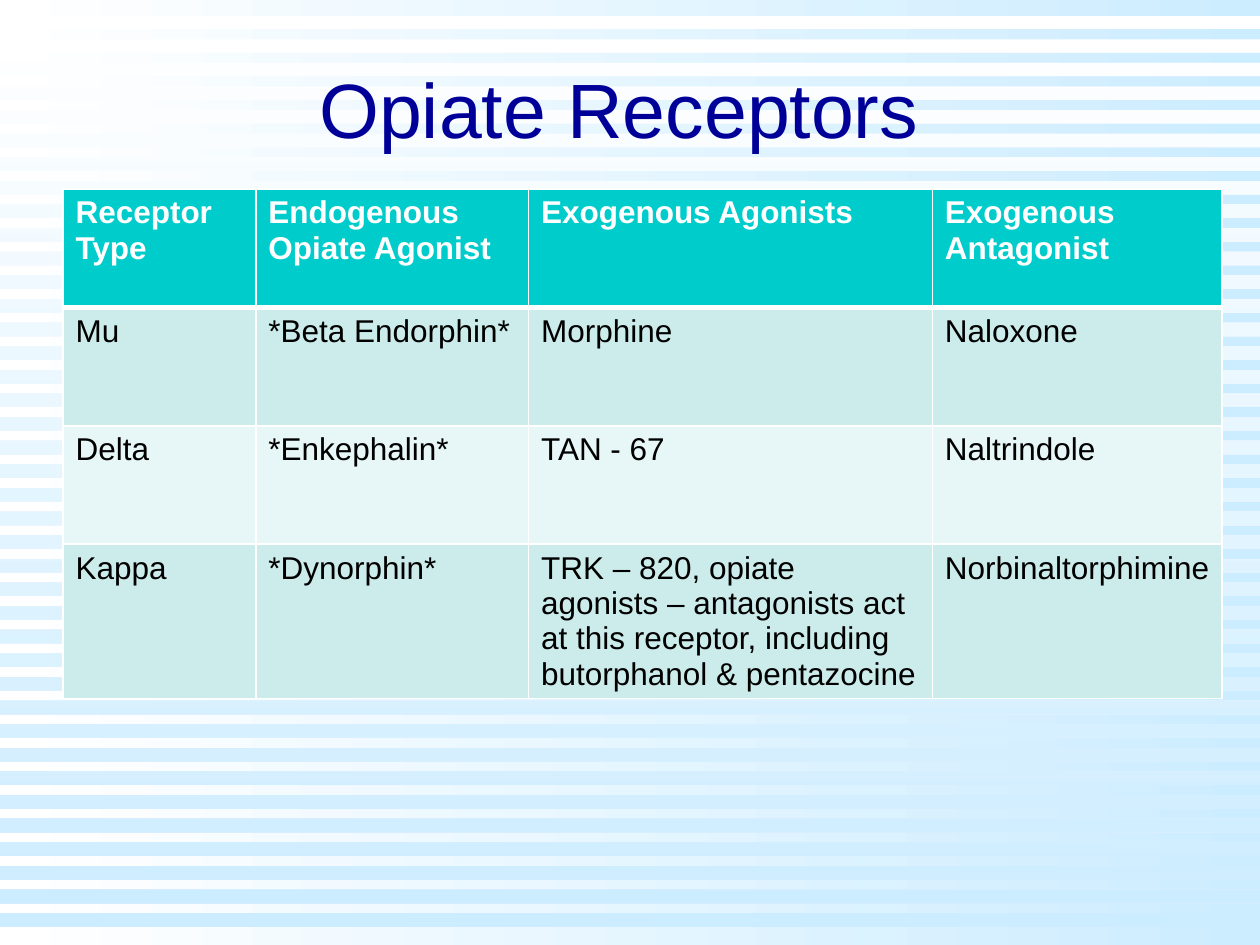
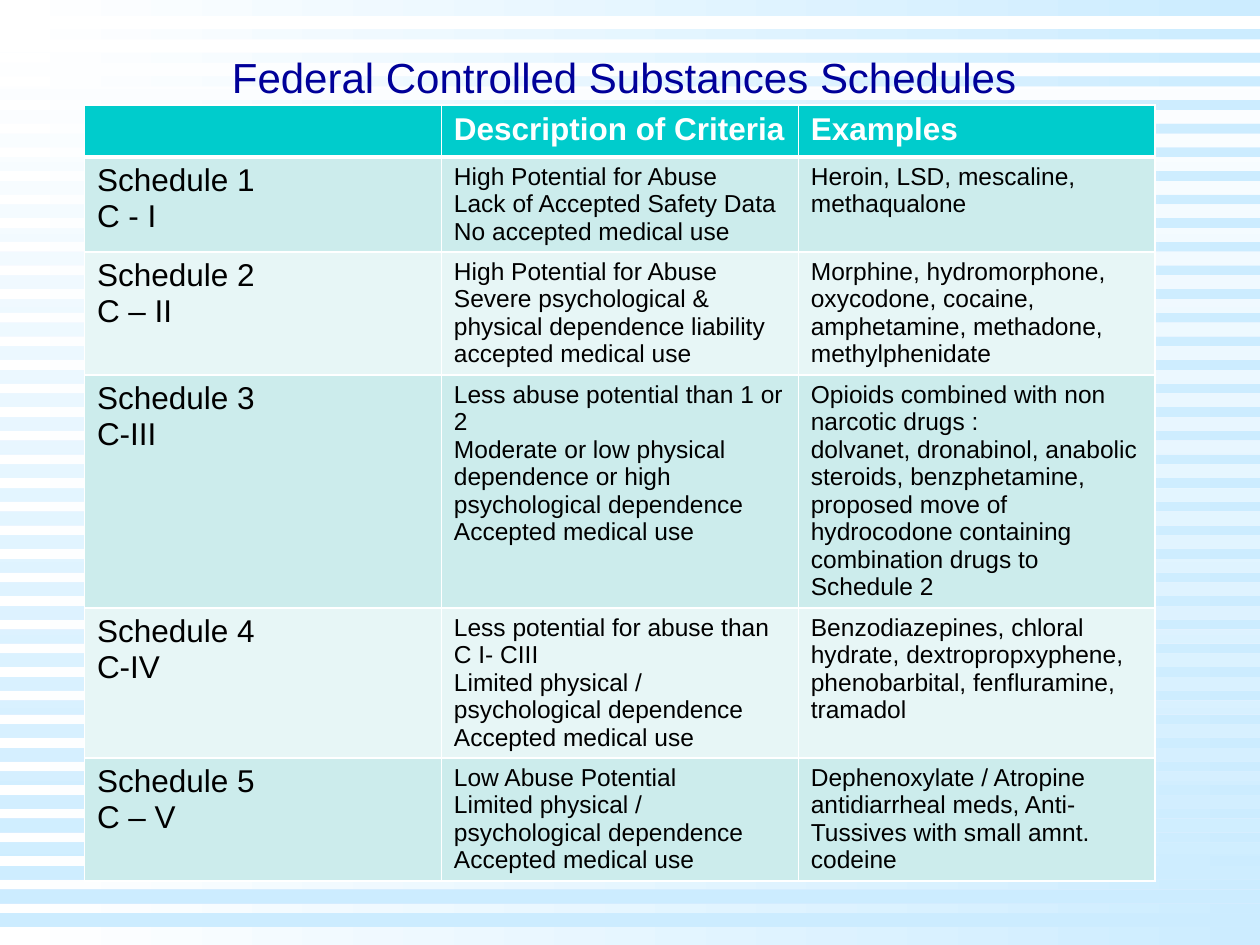
from dataclasses import dataclass

from lxml.etree import SubElement
from pptx import Presentation
from pptx.dml.color import RGBColor as RGB
from pptx.enum.shapes import MSO_SHAPE as SHAPE
from pptx.enum.text import MSO_ANCHOR as ANCHOR, PP_ALIGN as ALIGN
from pptx.oxml.ns import qn
from pptx.util import Emu, Inches, Pt


@dataclass(frozen=True)
class Theme:
    font: str = "Arial"
    white: str = "FFFFFF"
    sky: str = "CCECFF"
    title: str = "000099"
    text: str = "000000"
    header: str = "00CCCC"
    bands: tuple[str, str] = ("CCECEC", "E7F6F6")
    large: int = 44
    medium: int = 24
    body: int = 18
    small: int = 14
    leading: float = 1.12  # line pitch as a share of the type size
    thin: float = 1
    thick: float = 3


@dataclass(frozen=True)
class Title:
    text: str
    size: int
    row: float


@dataclass(frozen=True)
class Grid:
    """A table: place, column widths and row heights in grid units."""
    col: float
    row: float
    widths: tuple[float, ...]
    heights: tuple[float, ...]
    sizes: tuple[int, ...]  # body type size of each column
    cells: tuple[tuple[str, ...], ...]


@dataclass(frozen=True)
class Page:
    title: Title
    grid: Grid


T = Theme()
W, H = Inches(10), Inches(7.5)
COLS, ROWS = 100, 75
STRIPES = 39


def x(cols: float) -> Emu:
    return Emu(round(W * cols / COLS))


def y(rows: float) -> Emu:
    return Emu(round(H * rows / ROWS))


# Shared helpers
def shade(fill, angle: float) -> None:
    """Blend white into sky blue; the angle runs counter-clockwise."""
    fill.gradient()
    fill.gradient_angle = angle
    for stop, color, place in zip(fill.gradient_stops, (T.white, T.sky), (0, 1)):
        stop.color.rgb = RGB.from_string(color)
        stop.position = place


def write(tf, text: str, size: int, color: str, bold: bool = False, align=ALIGN.LEFT) -> None:
    for i, line in enumerate(text.split("\n")):
        p = tf.add_paragraph() if i else tf.paragraphs[0]
        p.alignment = align
        p.line_spacing = Pt(round(size * T.leading, 1))
        r = p.add_run()
        r.text = line
        r.font.name, r.font.size, r.font.bold = T.font, Pt(size), bold
        r.font.color.rgb = RGB.from_string(color)


def add_borders(cell, bottom: float) -> None:
    tc_pr = cell._tc.get_or_add_tcPr()
    for side, width in zip("LRTB", (T.thin, T.thin, T.thin, bottom)):
        ln = SubElement(tc_pr, qn(f"a:ln{side}"), w=str(Pt(width)))
        SubElement(SubElement(ln, qn("a:solidFill")), qn("a:srgbClr"), val=T.white)


# Striped backdrop
def add_backdrop(s) -> None:
    panel = s.shapes.add_shape(SHAPE.RECTANGLE, 0, 0, W, H)
    pitch, depth = ROWS / 40, 1.05
    tops = [1.25 + i * pitch for i in range(STRIPES)]
    fb = s.shapes.build_freeform(0, y(tops[0]), scale=1.0)
    for top in tops:
        fb.move_to(0, y(top))
        fb.add_line_segments([(W, y(top)), (W, y(top + depth)), (0, y(top + depth))])
    for sp, angle in ((panel, 0), (fb.convert_to_shape(), 270)):
        shade(sp.fill, angle)
        sp.line.fill.background()
        sp.shadow.inherit = False


def add_title(s, title: Title) -> None:
    tf = s.shapes.add_textbox(x(7.5), y(title.row), x(85), y(12.5)).text_frame
    tf.word_wrap = True
    tf.vertical_anchor = ANCHOR.MIDDLE
    write(tf, title.text, title.size, T.title, align=ALIGN.CENTER)


def add_grid(s, grid: Grid) -> None:
    table = s.shapes.add_table(
        len(grid.heights), len(grid.widths), x(grid.col), y(grid.row),
        x(sum(grid.widths)), y(sum(grid.heights))).table
    for column, width in zip(table.columns, grid.widths):
        column.width = x(width)
    for i, (row, height) in enumerate(zip(table.rows, grid.heights)):
        row.height = y(height)
        head = i == 0
        for cell, text, size in zip(row.cells, grid.cells[i], grid.sizes):
            add_borders(cell, T.thick if head else T.thin)
            cell.fill.solid()
            cell.fill.fore_color.rgb = RGB.from_string(T.header if head else T.bands[(i - 1) % 2])
            if text:
                write(cell.text_frame, text, T.body if head else size,
                      T.white if head else T.text, bold=head)


# Content
RECEPTORS = Page(
    Title("Opiate Receptors ", T.large, 2.5),
    Grid(5, 15, (15.3, 21.65, 32.05, 23), (9.4, 9.4, 9.4, 12.2), (T.body,) * 4, (
        ("Receptor Type", "Endogenous Opiate Agonist", "Exogenous Agonists",
         "Exogenous\nAntagonist"),
        ("Mu", "*Beta Endorphin*", "Morphine", "Naloxone"),
        ("Delta", "*Enkephalin*", "TAN - 67", "Naltrindole"),
        ("Kappa", "*Dynorphin*",
         "TRK – 820, opiate agonists – antagonists act at this receptor, "
         "including butorphanol & pentazocine", "Norbinaltorphimine"),
    )))

SCHEDULES = Page(
    Title("Federal Controlled Substances Schedules ", T.medium, 0),
    Grid(6.7, 8.35, (28.33,) * 3, (4.1, 7.5, 9.75, 18.5, 11.9, 9.75),
         (T.body, T.small, T.small), (
        ("", "Description of Criteria", "Examples"),
        ("Schedule 1\nC - I",
         "High Potential for Abuse\nLack of Accepted Safety Data\nNo accepted medical use",
         "Heroin, LSD, mescaline, methaqualone"),
        ("Schedule 2\nC – II",
         "High Potential for Abuse\nSevere psychological & physical dependence liability\n"
         "accepted medical use",
         "Morphine, hydromorphone, oxycodone, cocaine, amphetamine, methadone, "
         "methylphenidate"),
        ("Schedule 3\nC-III",
         "Less abuse potential than 1 or 2\nModerate or low physical dependence or high "
         "psychological dependence\nAccepted medical use",
         "Opioids combined with non narcotic drugs :\ndolvanet, dronabinol, anabolic "
         "steroids, benzphetamine, proposed move of hydrocodone containing combination "
         "drugs to Schedule 2"),
        ("Schedule 4\nC-IV",
         "Less potential for abuse than C I- CIII\nLimited physical / psychological "
         "dependence\nAccepted medical use",
         "Benzodiazepines, chloral hydrate, dextropropxyphene, phenobarbital, "
         "fenfluramine, tramadol"),
        ("Schedule 5\nC – V",
         "Low Abuse Potential\nLimited physical / psychological dependence\n"
         "Accepted medical use",
         "Dephenoxylate / Atropine antidiarrheal meds, Anti- Tussives with small amnt. "
         "codeine"),
    )))


def main() -> None:
    prs = Presentation()
    prs.slide_width, prs.slide_height = W, H
    shade(prs.slide_master.background.fill, 270)
    for page in (RECEPTORS, SCHEDULES):
        s = prs.slides.add_slide(prs.slide_layouts[6])
        add_backdrop(s)
        add_title(s, page.title)
        add_grid(s, page.grid)
    prs.save("out.pptx")


if __name__ == "__main__":
    main()
